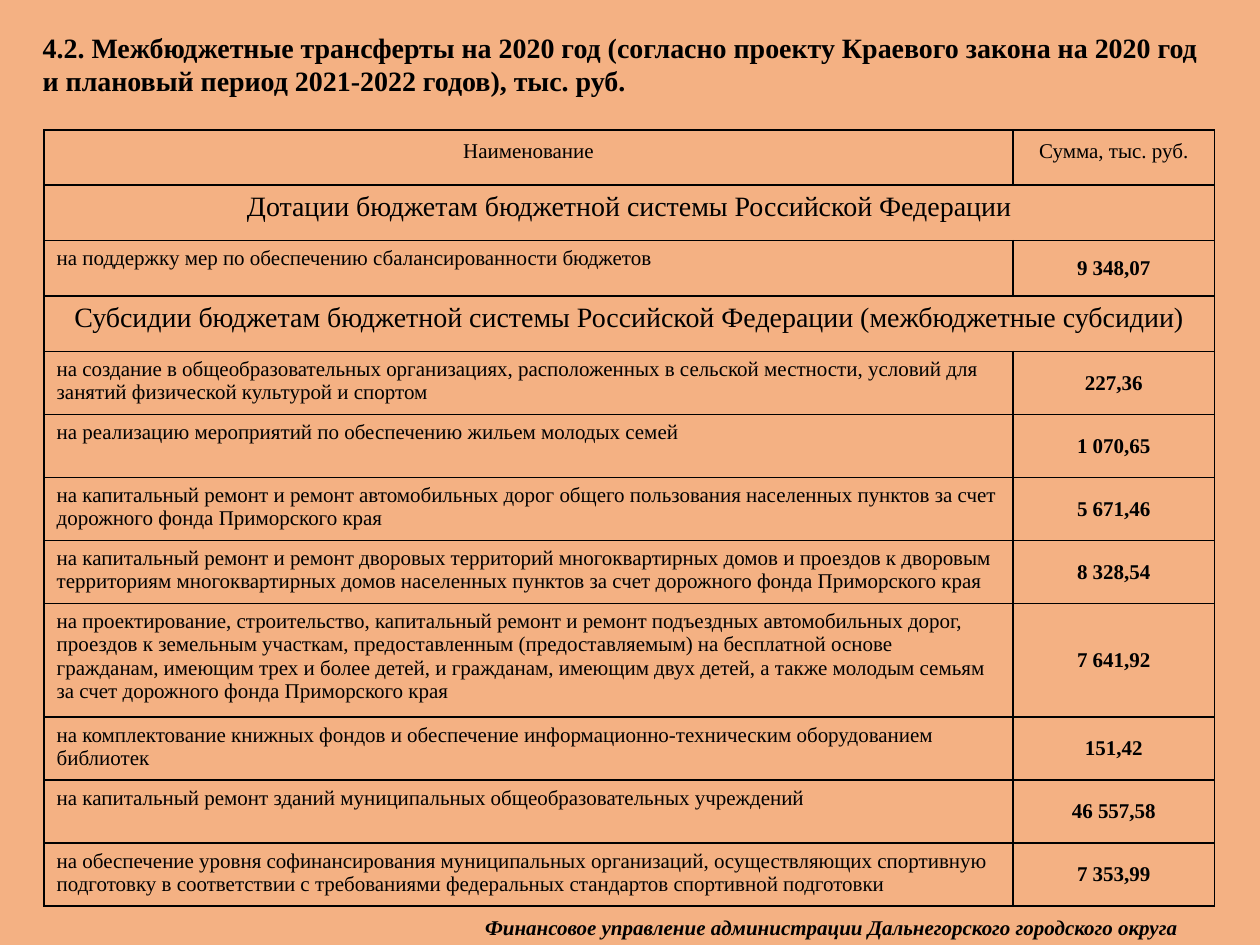
from dataclasses import dataclass

from lxml import etree
from pptx import Presentation
from pptx import util as u
from pptx.dml.color import RGBColor
from pptx.enum import text
from pptx.oxml import ns

FONT = "Times New Roman"
BACKGROUND = "F4B183"
BLACK = "000000"
COLUMN_WIDTHS = (7.69, 1.6)
CENTER = text.PP_ALIGN.CENTER
LEFT = text.PP_ALIGN.LEFT


@dataclass
class Row:
    name: str
    amount: str = ""
    height: float = 0.5

    @property
    def is_section(self) -> bool:
        return not self.amount


HEADER = Row("Наименование", "Сумма, тыс. руб.", 0.44)
TRANSFERS = [
    Row("Дотации бюджетам бюджетной системы Российской Федерации", height=0.44),
    Row("на поддержку мер по обеспечению сбалансированности бюджетов", "9 348,07", 0.44),
    Row("Субсидии бюджетам бюджетной системы Российской Федерации "
        "(межбюджетные субсидии)", height=0.44),
    Row("на создание в общеобразовательных организациях, расположенных в сельской "
        "местности, условий для занятий физической культурой и спортом", "227,36"),
    Row("на реализацию мероприятий по обеспечению жильем молодых семей", "1 070,65"),
    Row("на капитальный ремонт и ремонт автомобильных дорог общего пользования "
        "населенных пунктов за счет дорожного фонда Приморского края", "5 671,46"),
    Row("на капитальный ремонт и ремонт дворовых территорий многоквартирных домов и "
        "проездов к дворовым территориям многоквартирных домов населенных пунктов "
        "за счет дорожного фонда Приморского края", "8 328,54"),
    Row("на проектирование, строительство, капитальный ремонт и ремонт подъездных "
        "автомобильных дорог, проездов к земельным участкам, предоставленным "
        "(предоставляемым) на бесплатной основе гражданам, имеющим трех и более детей, "
        "и гражданам, имеющим двух детей, а также молодым семьям за счет дорожного "
        "фонда Приморского края", "7 641,92", 0.9),
    Row("на комплектование книжных фондов и обеспечение информационно-техническим "
        "оборудованием библиотек", "151,42"),
    Row("на капитальный ремонт зданий муниципальных общеобразовательных учреждений",
        "46 557,58"),
    Row("на обеспечение уровня софинансирования муниципальных организаций, "
        "осуществляющих спортивную подготовку в соответствии с требованиями "
        "федеральных стандартов спортивной подготовки", "7 353,99"),
]


def color(value: str) -> RGBColor:
    return RGBColor.from_string(value)


def write(frame, words: str, size: float, bold=False, italic=False,
          align=LEFT, spacing=1.0) -> None:
    paragraph = frame.paragraphs[0]
    paragraph.alignment = align
    paragraph.line_spacing = spacing
    run = paragraph.add_run()
    run.text = words
    run.font.name = FONT
    run.font.size = u.Pt(size)
    run.font.bold = bold
    run.font.italic = italic
    run.font.color.rgb = color(BLACK)


def add_text(slide, box: tuple, words: str, size: float, italic=False, indent=0.1) -> None:
    shape = slide.shapes.add_textbox(*map(u.Inches, box))
    frame = shape.text_frame
    frame.word_wrap = True
    frame.margin_left = u.Inches(indent)
    write(frame, words, size, bold=True, italic=italic)


def style_cell(cell) -> None:
    """Leave the cell unfilled and draw a thin black border on each side."""
    properties = cell._tc.get_or_add_tcPr()
    for side in ("lnL", "lnR", "lnT", "lnB"):
        line = etree.SubElement(properties, ns.qn(f"a:{side}"), w=str(u.Pt(1)))
        fill = etree.SubElement(line, ns.qn("a:solidFill"))
        etree.SubElement(fill, ns.qn("a:srgbClr"), val=BLACK)
    cell.fill.background()


def add_transfers_table(slide, left: float, top: float) -> None:
    rows = [HEADER, *TRANSFERS]
    frame = slide.shapes.add_table(
        len(rows), len(COLUMN_WIDTHS), u.Inches(left), u.Inches(top),
        u.Inches(sum(COLUMN_WIDTHS)), u.Inches(sum(row.height for row in rows)))
    table = frame.table
    table.first_row = table.horz_banding = False
    for column, width in zip(table.columns, COLUMN_WIDTHS):
        column.width = u.Inches(width)
    for index, row in enumerate(rows):
        table.rows[index].height = u.Inches(row.height)
        name, amount = table.cell(index, 0), table.cell(index, 1)
        style_cell(name)
        style_cell(amount)
        if row is HEADER:
            write(name.text_frame, row.name, 12, align=CENTER, spacing=1.15)
            write(amount.text_frame, row.amount, 12, align=CENTER, spacing=1.15)
        elif row.is_section:
            name.merge(amount)
            write(name.text_frame, row.name, 16, align=CENTER)
        else:
            write(name.text_frame, row.name, 12)
            write(amount.text_frame, row.amount, 12, bold=True, align=CENTER)
            amount.vertical_anchor = text.MSO_ANCHOR.MIDDLE


def main() -> None:
    presentation = Presentation()
    presentation.slide_width = u.Inches(10)
    presentation.slide_height = u.Inches(7.5)
    slide = presentation.slides.add_slide(presentation.slide_layouts[6])
    slide.background.fill.solid()
    slide.background.fill.fore_color.rgb = color(BACKGROUND)

    add_text(slide, (3.44, 7.21, 6.05, 0.3),
             "Финансовое управление администрации Дальнегорского городского округа",
             12, italic=True, indent=0.41)
    add_text(slide, (0.24, 0.19, 9.41, 0.64),
             "4.2. Межбюджетные трансферты на 2020 год (согласно проекту Краевого закона "
             "на 2020 год и плановый период 2021-2022 годов), тыс. руб.", 16)
    add_transfers_table(slide, 0.35, 1.03)
    presentation.save("out.pptx")


if __name__ == "__main__":
    main()
